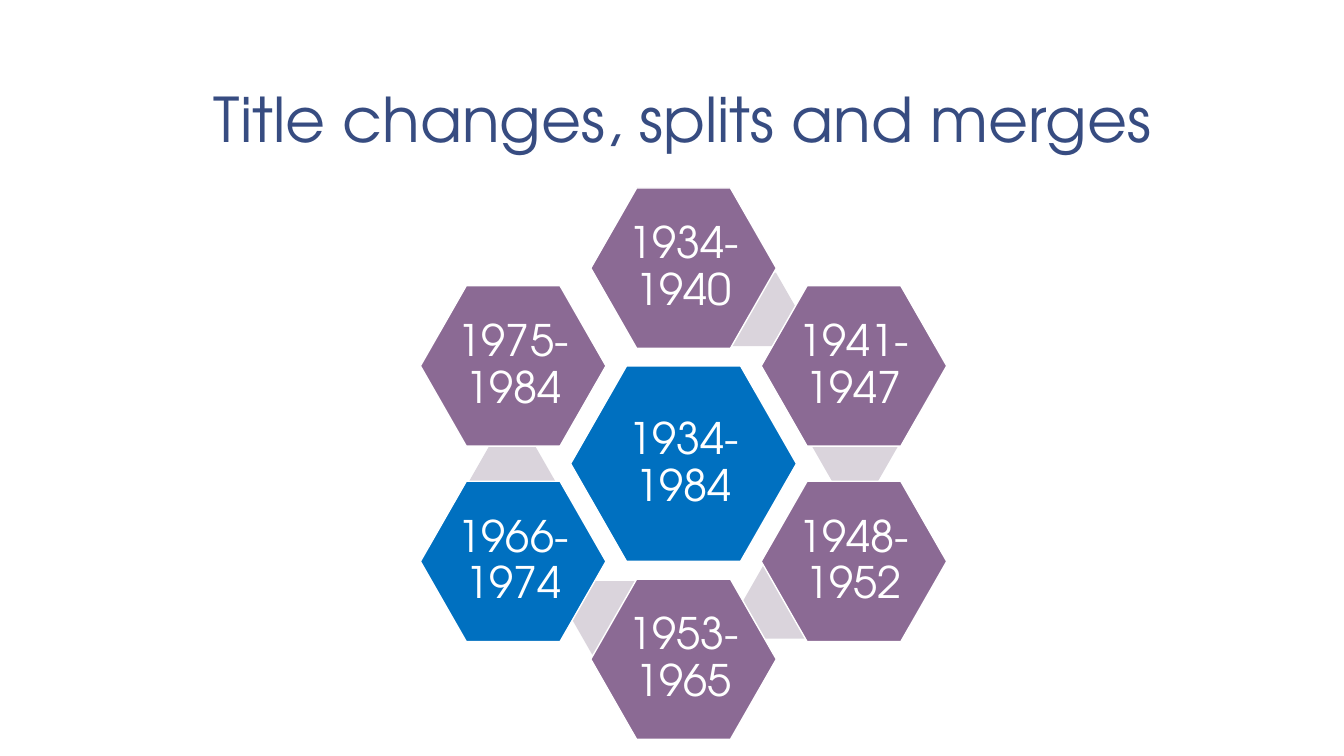
import dataclasses

import pptx
import pptx.dml.color
import pptx.enum.shapes
import pptx.enum.text
import pptx.util

Inches = pptx.util.Inches


@dataclasses.dataclass(frozen=True)
class Theme:
    """Colours, font and type sizes of the slide."""
    font: str = "TeX Gyre Adventor"
    title_size: int = 44
    label_size: int = 31
    title: str = "374C81"
    white: str = "FFFFFF"
    blue: str = "0070C0"
    purple: str = "8B6A94"
    pale: str = "DAD4DC"


THEME = Theme()
CENTRE_X, CENTRE_Y = 6.78, 4.6
COLUMN_STEP, ROW_STEP = 1.69, 0.97
HUB_SIZE, PERIOD_SIZE, LINK_SIZE = (2.24, 1.94), (1.84, 1.59), (0.85, 0.73)

PERIODS = [
    ("1934-1940", 0, -2, THEME.purple),
    ("1941-1947", 1, -1, THEME.purple),
    ("1948-1952", 1, 1, THEME.purple),
    ("1953-1965", 0, 2, THEME.purple),
    ("1966-1974", -1, 1, THEME.blue),
    ("1975-1984", -1, -1, THEME.purple),
]
LINK_OFFSETS = [(0.7, -1.53), (1.7, -0.17), (1.01, 1.37), (-0.69, 1.53), (-1.7, 0.17)]


def colour(value):
    """Return an RGB colour from its hex value."""
    return pptx.dml.color.RGBColor.from_string(value)


def set_text(frame, text, size, hue, spacing):
    """Write one centred line of formatted text."""
    frame.text = text
    frame.word_wrap = True
    para = frame.paragraphs[0]
    para.alignment = pptx.enum.text.PP_ALIGN.CENTER
    para.line_spacing = spacing
    font = para.runs[0].font
    font.name = THEME.font
    font.size = pptx.util.Pt(size)
    font.color.rgb = colour(hue)


def add_title(page, text):
    """Place and format the title placeholder."""
    box = page.shapes.title
    box.left, box.top = Inches(1.22), Inches(0.08)
    box.width, box.height = Inches(11.11), Inches(1.53)
    frame = box.text_frame
    set_text(frame, text, THEME.title_size, THEME.title, 0.85)
    frame.auto_size = pptx.enum.text.MSO_AUTO_SIZE.NONE
    frame.vertical_anchor = pptx.enum.text.MSO_ANCHOR.BOTTOM
    frame.margin_left = frame.margin_right = Inches(0.13)
    frame.margin_top = frame.margin_bottom = Inches(0.07)


def add_hexagon(page, offset, size, fill):
    """Add a plain hexagon at an offset from the ring's centre."""
    width, height = size
    shape = page.shapes.add_shape(
        pptx.enum.shapes.MSO_SHAPE.HEXAGON,
        Inches(CENTRE_X + offset[0] - width / 2),
        Inches(CENTRE_Y + offset[1] - height / 2),
        Inches(width), Inches(height))
    shape.adjustments[0] = 0.286
    shape.adjustments[1] = 1.155
    shape.shadow.inherit = False
    shape.fill.solid()
    shape.fill.fore_color.rgb = colour(fill)
    shape.line.fill.background()
    return shape


def add_period(page, text, offset, size, fill):
    """Add a white-edged hexagon labelled with a span of years."""
    shape = add_hexagon(page, offset, size, fill)
    shape.line.color.rgb = colour(THEME.white)
    shape.line.width = pptx.util.Pt(1)
    frame = shape.text_frame
    set_text(frame, text, THEME.label_size, THEME.white, 0.9)
    frame.vertical_anchor = pptx.enum.text.MSO_ANCHOR.MIDDLE
    frame.margin_left = frame.margin_right = Inches(0.04)
    frame.margin_top = frame.margin_bottom = Inches(0.04)


def main():
    """Build and save the slide."""
    deck = pptx.Presentation()
    deck.slide_width, deck.slide_height = Inches(13.33), Inches(7.5)
    page = deck.slides.add_slide(deck.slide_layouts[5])
    add_title(page, "Title changes, splits and merges")
    for offset in LINK_OFFSETS:
        add_hexagon(page, offset, LINK_SIZE, THEME.pale)
    add_period(page, "1934-1984", (0, 0), HUB_SIZE, THEME.blue)
    for text, column, row, fill in PERIODS:
        offset = (column * COLUMN_STEP, row * ROW_STEP)
        add_period(page, text, offset, PERIOD_SIZE, fill)
    deck.save("out.pptx")


if __name__ == "__main__":
    main()
